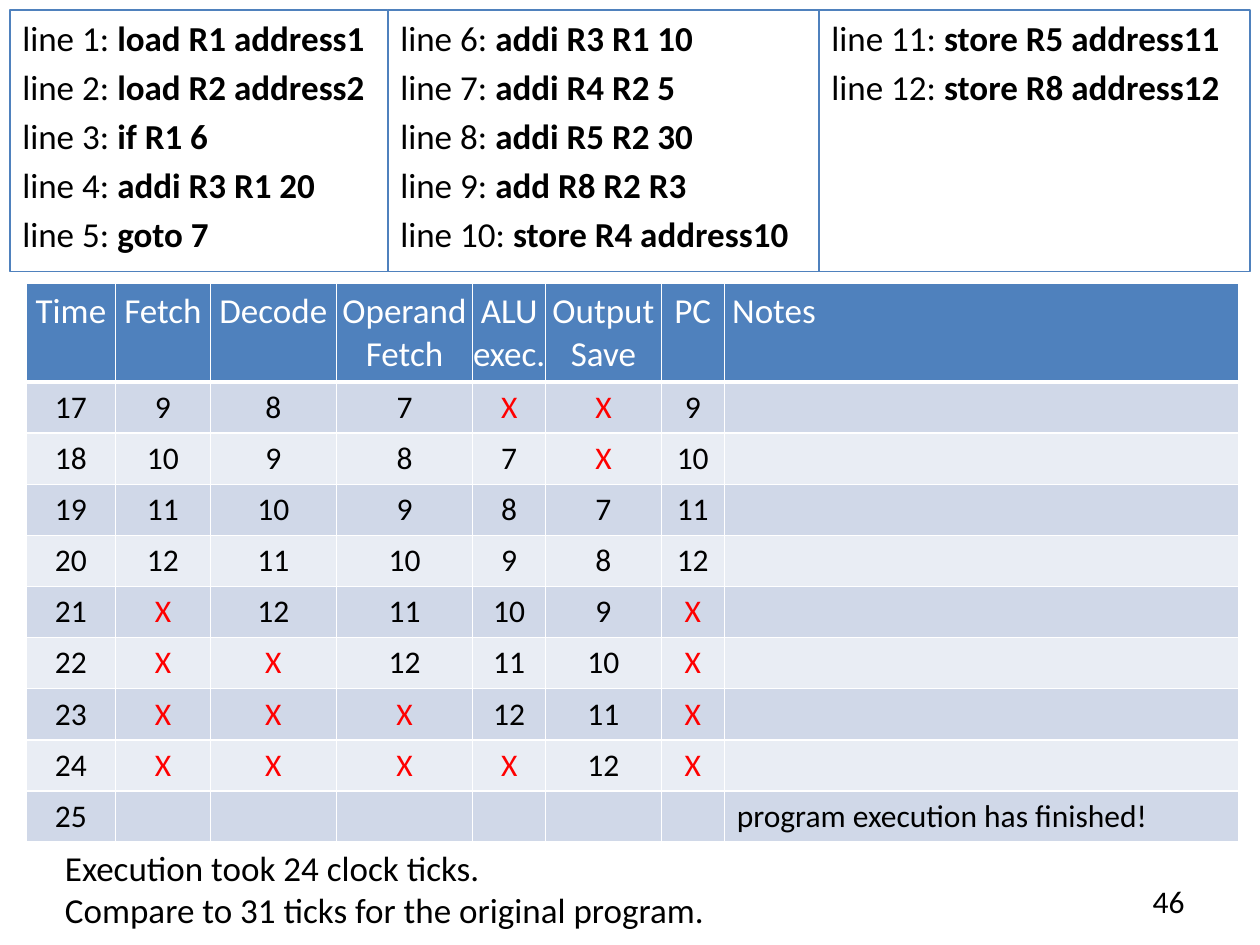
import pptx
import pptx.util
import pptx.dml.color
import pptx.enum.text
import pptx.oxml.ns
import lxml.etree
from pptx.dml.color import RGBColor
from pptx.util import Cm, Pt

FONT = "Calibri"
BLACK = RGBColor(0x00, 0x00, 0x00)
WHITE = RGBColor(0xFF, 0xFF, 0xFF)
RED = RGBColor(0xFF, 0x00, 0x00)
BLUE = RGBColor(0x4F, 0x81, 0xBD)
BAND_DARK = RGBColor(0xD0, 0xD8, 0xE8)
BAND_LIGHT = RGBColor(0xE9, 0xED, 0xF4)
ALIGN = pptx.enum.text.PP_ALIGN
ANCHOR = pptx.enum.text.MSO_ANCHOR

INSTRUCTIONS = [
    "load R1 address1", "load R2 address2", "if R1 6", "addi R3 R1 20", "goto 7",
    "addi R3 R1 10", "addi R4 R2 5", "addi R5 R2 30", "add R8 R2 R3",
    "store R4 address10", "store R5 address11", "store R8 address12",
]
LINES_PER_PANEL = 5
PANEL_WIDTHS = [7.62, 8.69, 8.69]

HEADERS = ["Time", "Fetch", "Decode", "Operand Fetch", "ALU exec.",
           "Output Save", "PC", " Notes"]
COLUMN_WIDTHS = [1.8, 1.91, 2.54, 2.75, 1.47, 2.33, 1.27, 10.37]
HEADER_HEIGHT, ROW_HEIGHT = 1.96, 1.03
# Time, five pipeline stages, program counter
TICKS = [
    "17 9 8 7 X X 9",
    "18 10 9 8 7 X 10",
    "19 11 10 9 8 7 11",
    "20 12 11 10 9 8 12",
    "21 X 12 11 10 9 X",
    "22 X X 12 11 10 X",
    "23 X X X 12 11 X",
    "24 X X X X 12 X",
]
LAST_ROW = ["25"] + [""] * 6 + ["program execution has finished!"]


def format_paragraph(para, size, color=BLACK, align=ALIGN.LEFT):
    para.alignment = align
    para.font.name = FONT
    para.font.size = Pt(size)
    para.font.bold = False
    para.font.color.rgb = color


def add_text(slide, left, top, width, height, text, size, align=ALIGN.LEFT):
    box = slide.shapes.add_textbox(Cm(left), Cm(top), Cm(width), Cm(height))
    para = box.text_frame.paragraphs[0]
    para.text = text
    format_paragraph(para, size, align=align)
    return box


def add_code_panel(slide, left, width, first_line, instructions):
    box = slide.shapes.add_textbox(Cm(left), Cm(0.2), Cm(width), Cm(5.28))
    box.line.color.rgb = BLUE
    box.line.width = Pt(0.75)
    frame = box.text_frame
    frame.word_wrap = True
    for index, instruction in enumerate(instructions):
        para = frame.add_paragraph() if index else frame.paragraphs[0]
        format_paragraph(para, 20)
        para.space_before = Pt(4)
        para.add_run().text = f"line {first_line + index}: "
        span = para.add_run()
        span.text = instruction
        span.font.bold = True


def set_borders(cell, top, bottom):
    """Draw white borders; top and bottom are widths in points."""
    properties = cell._tc.get_or_add_tcPr()
    for side, width in (("L", 1), ("R", 1), ("T", top), ("B", bottom)):
        line = lxml.etree.SubElement(
            properties, pptx.oxml.ns.qn(f"a:ln{side}"), w=str(Pt(width)))
        fill = lxml.etree.SubElement(line, pptx.oxml.ns.qn("a:solidFill"))
        lxml.etree.SubElement(fill, pptx.oxml.ns.qn("a:srgbClr"), val=str(WHITE))


def fill_cell(cell, text, row, is_note):
    is_header = row == 0
    set_borders(cell, 3 if row == 1 else 1, 3 if is_header else 1)
    cell.fill.solid()
    cell.fill.fore_color.rgb = (
        BLUE if is_header else BAND_DARK if row % 2 else BAND_LIGHT)
    if is_header:
        cell.margin_left = cell.margin_right = 0
    else:
        cell.vertical_anchor = ANCHOR.MIDDLE
    para = cell.text_frame.paragraphs[0]
    para.text = text
    color = WHITE if is_header else RED if text == "X" else BLACK
    format_paragraph(para, 20 if is_header else 18, color,
                     ALIGN.LEFT if is_note else ALIGN.CENTER)


def add_pipeline_table(slide):
    rows = [HEADERS] + [tick.split() + [""] for tick in TICKS] + [LAST_ROW]
    heights = [HEADER_HEIGHT] + [ROW_HEIGHT] * (len(rows) - 1)
    table = slide.shapes.add_table(
        len(rows), len(HEADERS), Cm(0.53), Cm(5.72),
        Cm(sum(COLUMN_WIDTHS)), Cm(sum(heights))).table
    table.first_row = table.horz_banding = False
    for column, width in zip(table.columns, COLUMN_WIDTHS):
        column.width = Cm(width)
    for row, (texts, height) in enumerate(zip(rows, heights)):
        table.rows[row].height = Cm(height)
        for column, text in enumerate(texts):
            fill_cell(table.cell(row, column), text, row,
                      column == len(HEADERS) - 1)


def main():
    deck = pptx.Presentation()
    deck.slide_width, deck.slide_height = Cm(25.4), Cm(19.05)
    page = deck.slides.add_slide(deck.slide_layouts[6])

    # Pipeline state at each clock tick
    add_pipeline_table(page)

    # Program listing in three adjoining panels
    left = 0.2
    for index, width in enumerate(PANEL_WIDTHS):
        start = index * LINES_PER_PANEL
        add_code_panel(page, left, width, start + 1,
                       INSTRUCTIONS[start:start + LINES_PER_PANEL])
        left += width

    # Conclusion and page number
    add_text(page, 1.06, 16.94, 13.51, 1.96,
             "Execution took 24 clock ticks.\n"
             "Compare to 31 ticks for the original program.", 20)
    number = add_text(page, 18.2, 17.66, 5.93, 1.01, "46", 18, ALIGN.RIGHT)
    number.text_frame.word_wrap = True
    number.text_frame.vertical_anchor = ANCHOR.MIDDLE

    deck.save("out.pptx")


if __name__ == "__main__":
    main()
